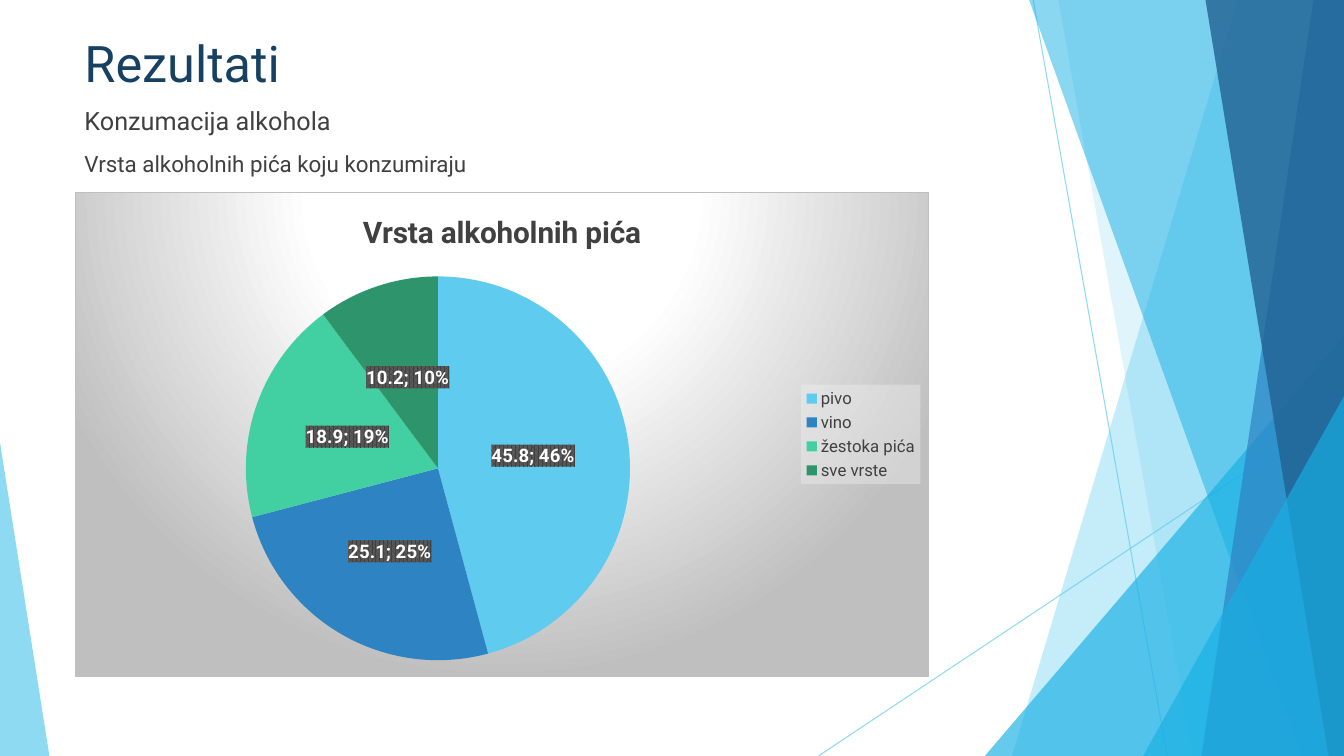
from lxml.etree import SubElement as Sub
from pptx import Presentation
from pptx.chart.data import CategoryChartData as ChartData
from pptx.dml.color import RGBColor as Rgb
from pptx.enum.chart import XL_CHART_TYPE as Kind, XL_LABEL_POSITION as Spot, XL_LEGEND_POSITION as Side
from pptx.enum.shapes import MSO_CONNECTOR as Link, MSO_SHAPE as Form
from pptx.enum.text import MSO_ANCHOR as Anchor
from pptx.oxml import parse_xml
from pptx.oxml.ns import nsdecls, qn
from pptx.util import Pt

WIDE, HIGH = 960, 540
FACE = "Roboto"
HUES = {
    "sky": "5FCBEF", "cyan": "17B0E4", "blue": "2E83C3", "navy": "226292",
    "title": "174162", "text": "404040", "mint": "42D0A2", "green": "2E946B",
    "white": "FFFFFF", "gray": "BFBFBF", "stripe": "595959", "pale": "F2F2F2",
}
DRINKS = {
    "pivo": (45.8, "sky"),
    "vino": (25.1, "blue"),
    "žestoka pića": (18.9, "mint"),
    "sve vrste": (10.2, "green"),
}


def hue(name):
    return Rgb.from_string(HUES[name])


def fade(item, alpha):
    for color in item.element.spPr.iter(qn("a:srgbClr")):
        Sub(color, qn("a:alpha"), val=str(alpha * 1000))


def paint(shape, color, alpha):
    shape.shadow.inherit = False
    shape.fill.solid()
    shape.fill.fore_color.rgb = hue(color)
    shape.line.fill.background()
    fade(shape, alpha)


def add_ray(slide, *ends):
    ray = slide.shapes.add_connector(Link.STRAIGHT, *map(Pt, ends))
    ray.line.color.rgb = hue("sky")
    ray.line.width = Pt(0.75)
    fade(ray, 70)
    Sub(ray.element.spPr, qn("a:effectLst"))


def add_band(slide, top, base, color, alpha):
    pen = slide.shapes.build_freeform(Pt(top), 0, scale=1.0)
    rest = [(WIDE, 0), (WIDE, HIGH), (base, HIGH)]
    pen.add_line_segments([(Pt(x), Pt(y)) for x, y in rest])
    paint(pen.convert_to_shape(), color, alpha)


def add_wedge(slide, left, top, width, peak, color, alpha):
    box = map(Pt, (left, top, width, HIGH - top))
    wedge = slide.shapes.add_shape(Form.ISOSCELES_TRIANGLE, *box)
    wedge.adjustments[0] = peak
    paint(wedge, color, alpha)


def set_font(font, size, color, bold=False):
    font.name = FACE
    font.size = Pt(size)
    font.bold = bold
    font.color.rgb = hue(color)


def add_text(slide, top, height, lines, color, anchor, gap=0):
    box = slide.shapes.add_textbox(Pt(53.28), Pt(top), Pt(676.8), Pt(height))
    frame = box.text_frame
    frame.word_wrap = True
    frame.vertical_anchor = anchor
    frame.text = "\n".join(text for text, size in lines)
    for para, (text, size) in zip(frame.paragraphs, lines):
        para.space_before = Pt(gap)
        set_font(para.runs[0].font, size, color)


def make_style(fill):
    return parse_xml(f'<c:spPr {nsdecls("c", "a")}>{fill}</c:spPr>')


def tint(name, inner=""):
    return f'<a:srgbClr val="{HUES[name]}">{inner}</a:srgbClr>'


def style_back(chart):
    stops = ((0, "white"), (39, "white"), (100, "gray"))
    marks = "".join(f'<a:gs pos="{at * 1000}">{tint(name)}</a:gs>' for at, name in stops)
    fill = (f'<a:gradFill><a:gsLst>{marks}</a:gsLst><a:path path="circle">'
            '<a:fillToRect l="50000" t="-80000" r="50000" b="180000"/></a:path></a:gradFill>'
            f'<a:ln w="{Pt(0.75)}"><a:solidFill>{tint("gray")}</a:solidFill></a:ln>')
    chart.element.find(qn("c:chart")).addnext(make_style(fill))


def place_plot(chart):
    area = chart.element.find(".//" + qn("c:plotArea"))
    for old in area.findall(qn("c:layout")):
        area.remove(old)
    rows = (("layoutTarget", "inner"), ("xMode", "edge"), ("yMode", "edge"),
            ("x", 0.2), ("y", 0.17), ("w", 0.45), ("h", 0.8))
    body = "".join(f'<c:{tag} val="{val}"/>' for tag, val in rows)
    area.insert(0, parse_xml(
        f'<c:layout {nsdecls("c")}><c:manualLayout>{body}</c:manualLayout></c:layout>'))


def style_labels(chart, plot):
    plot.has_data_labels = True
    labels = plot.data_labels
    labels.show_value = labels.show_percentage = True
    labels.position = Spot.CENTER
    set_font(labels.font, 13.3, "white", True)
    root = chart.element.find(".//" + qn("c:dLbls"))
    fill = (f'<a:pattFill prst="pct75"><a:fgClr>{tint("text")}</a:fgClr>'
            f'<a:bgClr>{tint("stripe")}</a:bgClr></a:pattFill>')
    root.find(qn("c:txPr")).addprevious(make_style(fill))
    mark = parse_xml(f'<c:separator {nsdecls("c")}>; </c:separator>')
    root.find(qn("c:showBubbleSize")).addnext(mark)


def style_legend(chart):
    chart.has_legend = True
    chart.legend.position = Side.RIGHT
    chart.legend.include_in_layout = False
    set_font(chart.legend.font, 12, "text")
    clear = '<a:alpha val="39000"/>'
    fill = f'<a:solidFill>{tint("pale", clear)}</a:solidFill>'
    root = chart.element.find(".//" + qn("c:legend"))
    root.find(qn("c:txPr")).addprevious(make_style(fill))


def add_pie(slide):
    data = ChartData()
    data.categories = list(DRINKS)
    data.add_series("Series 1", [val for val, color in DRINKS.values()])
    box = map(Pt, (53.28, 136.8, 610.56, 347.04))
    chart = slide.shapes.add_chart(Kind.PIE, *box, data).chart
    chart.font.name = FACE
    chart.font.size = Pt(10)
    chart.has_title = True
    title = chart.chart_title.text_frame
    title.text = "Vrsta alkoholnih pića"
    set_font(title.paragraphs[0].runs[0].font, 21.3, "text", True)
    plot = chart.plots[0]
    plot.vary_by_categories = True
    for spot, (val, color) in enumerate(DRINKS.values()):
        fill = plot.series[0].points[spot].format.fill
        fill.solid()
        fill.fore_color.rgb = hue(color)
    style_labels(chart, plot)
    style_legend(chart)
    style_back(chart)
    place_plot(chart)


def add_decor(slide):
    add_ray(slide, 738, 0, 833.76, HIGH)
    add_ray(slide, WIDE, 290.16, 584.64, HIGH)
    add_band(slide, 884.16, 722.88, "sky", 36)
    add_band(slide, 756, 851.76, "sky", 20)
    add_wedge(slide, 703.44, 239.76, 256.56, 1, "cyan", 66)
    add_band(slide, 735.12, 929.52, "cyan", 50)
    add_band(slide, 938.16, 858.24, "blue", 70)
    add_band(slide, 861.12, 948.96, "navy", 80)
    add_wedge(slide, 816.48, 282.96, 143.52, 1, "cyan", 66)
    add_wedge(slide, 0, 316.08, 35.28, 0, "sky", 70)


def main():
    deck = Presentation()
    deck.slide_width, deck.slide_height = Pt(WIDE), Pt(HIGH)
    slide = deck.slides.add_slide(deck.slide_layouts[6])
    add_decor(slide)
    add_text(slide, 17.28, 54.72, [("Rezultati", 36)], "title", Anchor.MIDDLE)
    lines = [("Konzumacija alkohola", 18), ("Vrsta alkoholnih pića koju konzumiraju", 16)]
    add_text(slide, 72, 403.92, lines, "text", Anchor.TOP, 10)
    add_pie(slide)
    deck.save("out.pptx")


if __name__ == "__main__":
    main()
